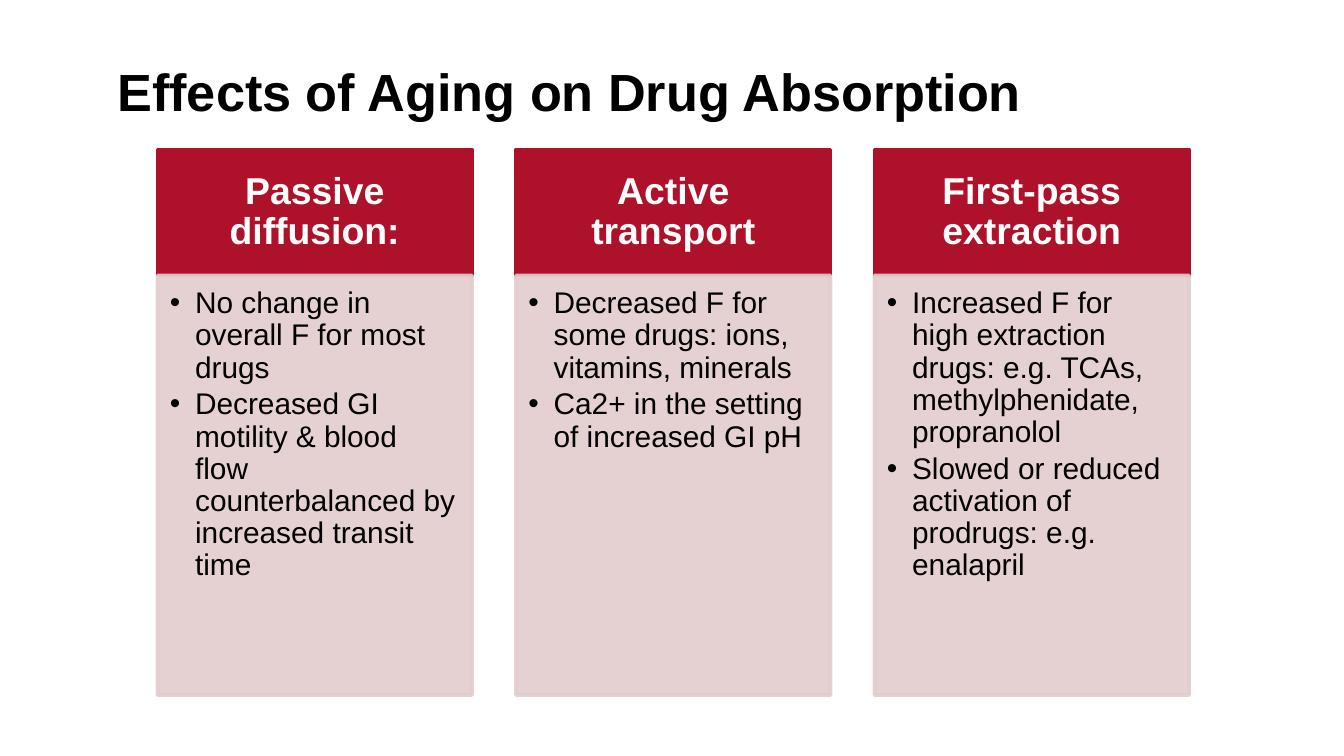
"""Build the slide on how aging changes drug absorption."""
from dataclasses import dataclass

from lxml.etree import SubElement
from pptx import Presentation
from pptx.dml.color import RGBColor
from pptx.enum.shapes import MSO_SHAPE as Preset
from pptx.enum.text import MSO_ANCHOR as Anchor, PP_ALIGN as Align
from pptx.oxml.ns import qn
from pptx.util import Pt

EMU_PER_PX = 2286
FONT = "Arial"
RED, PINK, WHITE, BLACK = "AD122A", "E3CCCD", "FFFFFF", "000000"
LEFT, TOP, WIDTH, STEP = 469, 445, 936, 1067
HEAD_HEIGHT, BODY_HEIGHT = 375, 1249
BULLET_INDENT = 75


@dataclass(frozen=True)
class Column:
    """One heading with its bullet points."""
    heading: str
    points: tuple[str, ...]


@dataclass(frozen=True)
class Area:
    """A rectangle in px."""
    left: int
    top: int
    width: int
    height: int


COLUMNS = (
    Column("Passive diffusion:", (
        "No change in overall F for most drugs",
        "Decreased GI motility & blood flow counterbalanced by increased transit time",
    )),
    Column("Active transport", (
        "Decreased F for some drugs: ions, vitamins, minerals",
        "Ca2+ in the setting of increased GI pH",
    )),
    Column("First-pass extraction", (
        "Increased F for high extraction drugs: e.g. TCAs, methylphenidate, propranolol",
        "Slowed or reduced activation of prodrugs: e.g. enalapril",
    )),
)


def px(length: int) -> int:
    """Turn px into EMU."""
    return length * EMU_PER_PX


def color(value: str) -> RGBColor:
    """Turn a hex string into a colour."""
    return RGBColor.from_string(value)


def place(area: Area) -> tuple[int, int, int, int]:
    """Give the position and size of an area in EMU."""
    return px(area.left), px(area.top), px(area.width), px(area.height)


def set_frame(frame, anchor: Anchor, insets: tuple[int, int, int, int]) -> None:
    """Set wrapping, anchor and insets of a text frame."""
    frame.word_wrap = True
    frame.vertical_anchor = anchor
    frame.margin_left, frame.margin_top, frame.margin_right, frame.margin_bottom = map(px, insets)


def write(para, text: str, size: int, fill: str, bold: bool, align: Align) -> None:
    """Add one styled run to a paragraph."""
    para.alignment = align
    para.line_spacing = 0.9
    span = para.add_run()
    span.text = text
    span.font.name = FONT
    span.font.size = Pt(size)
    span.font.bold = bold
    span.font.color.rgb = color(fill)


def add_bullet(para) -> None:
    """Give a paragraph a hanging bullet."""
    para.space_after = Pt(2.4)
    properties = para._p.get_or_add_pPr()
    properties.set("marL", str(px(BULLET_INDENT)))
    properties.set("indent", str(-px(BULLET_INDENT)))
    SubElement(properties, qn("a:buFont"), typeface=FONT)
    SubElement(properties, qn("a:buChar"), char="•")


def add_panel(page, area: Area, fill: str, opacity: int = 100):
    """Draw a rectangle with fill and line of one colour."""
    box = page.shapes.add_shape(Preset.RECTANGLE, *place(area))
    box.shadow.inherit = False
    box.fill.solid()
    box.line.width = Pt(2)
    for paint in (box.fill.fore_color, box.line.color):
        paint.rgb = color(fill)
    if opacity < 100:
        for node in list(box._element.spPr.iter(qn("a:srgbClr"))):
            SubElement(node, qn("a:alpha"), val=str(opacity * 1000))
    return box


def add_column(page, column: Column, left: int) -> None:
    """Draw a heading panel above its panel of points."""
    head = add_panel(page, Area(left, TOP, WIDTH, HEAD_HEIGHT), RED)
    set_frame(head.text_frame, Anchor.MIDDLE, (62, 36, 62, 36))
    write(head.text_frame.paragraphs[0], column.heading, 20, WHITE, True, Align.CENTER)

    body = add_panel(page, Area(left, TOP + HEAD_HEIGHT, WIDTH, BODY_HEIGHT), PINK, 90)
    frame = body.text_frame
    set_frame(frame, Anchor.TOP, (37, 37, 50, 56))
    for index, point in enumerate(column.points):
        para = frame.add_paragraph() if index else frame.paragraphs[0]
        write(para, point, 16, BLACK, False, Align.LEFT)
        add_bullet(para)


def add_title(page, text: str) -> None:
    """Write the slide title."""
    box = page.shapes.add_textbox(*place(Area(310, 80, 3540, 404)))
    set_frame(box.text_frame, Anchor.MIDDLE, (40, 0, 40, 0))
    write(box.text_frame.paragraphs[0], text, 28, BLACK, True, Align.LEFT)


def main() -> None:
    """Build and save the deck."""
    deck = Presentation()
    deck.slide_width, deck.slide_height = px(4000), px(2250)
    page = deck.slides.add_slide(deck.slide_layouts[6])
    for index, column in enumerate(COLUMNS):
        add_column(page, column, LEFT + index * STEP)
    add_title(page, "Effects of Aging on Drug Absorption")
    deck.save("out.pptx")


if __name__ == "__main__":
    main()
